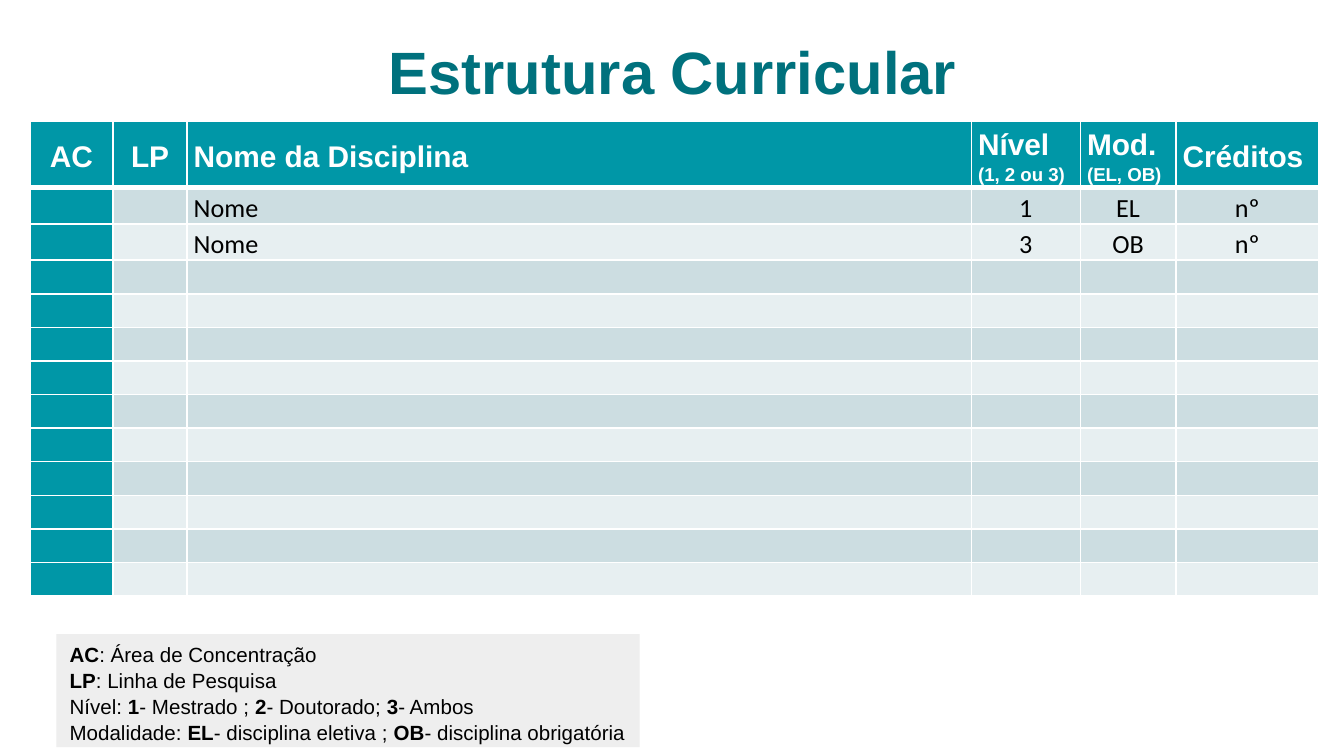
import pptx
import pptx.dml.color
import pptx.enum.shapes
import pptx.enum.text
import pptx.util
from lxml import etree

Pt = pptx.util.Pt
ALIGN = pptx.enum.text.PP_ALIGN
ANCHOR = pptx.enum.text.MSO_ANCHOR
NS = "http://schemas.openxmlformats.org/drawingml/2006/main"

TEAL, WHITE, BLACK = "0097A7", "FFFFFF", "000000"
BANDS = ["CCDDE1", "E7EFF1"]
WIDTHS = [44.6, 39.6, 420.2, 58.4, 51.2, 76.4]
HEADER = [
    [("AC", 16)],
    [("LP", 16)],
    [("Nome da Disciplina", 16)],
    [("Nível ", 16), ("(1, 2 ou 3)", 10)],
    [("Mod. ", 16), ("(EL, OB)", 10)],
    [("Créditos", 16)],
]
COURSES = [
    ["", "", "Nome", "1", "EL", "nº"],
    ["", "", "Nome", "3", "OB", "nº"],
]
EMPTY_ROWS = 10
# Each line alternates plain and bold text, starting with plain
LEGEND = [
    ["", "AC", ": Área de Concentração"],
    ["", "LP", ": Linha de Pesquisa"],
    ["Nível: ", "1", "- Mestrado ; ", "2", "- Doutorado; ", "3", "- Ambos"],
    ["Modalidade: ", "EL", "- disciplina eletiva ; ", "OB", "- disciplina obrigatória"],
]


def rgb(color):
    return pptx.dml.color.RGBColor.from_string(color)


def add_text(para, text, size=11, color=BLACK, bold=False, font="Arial"):
    span = para.add_run()
    span.text = text
    span.font.name = font
    span.font.size = Pt(size)
    span.font.bold = bold
    span.font.color.rgb = rgb(color)


def set_borders(cell, top=1, bottom=1):
    properties = cell._tc.get_or_add_tcPr()
    for side, width in (("L", 1), ("R", 1), ("T", top), ("B", bottom)):
        line = etree.SubElement(properties, f"{{{NS}}}ln{side}", w=str(Pt(width)))
        fill = etree.SubElement(line, f"{{{NS}}}solidFill")
        etree.SubElement(fill, f"{{{NS}}}srgbClr", val=WHITE)


def format_cell(cell, fill, align=ALIGN.LEFT, top=1, bottom=1):
    set_borders(cell, top, bottom)
    cell.fill.solid()
    cell.fill.fore_color.rgb = rgb(fill)
    cell.vertical_anchor = ANCHOR.MIDDLE
    cell.margin_left = cell.margin_right = Pt(3.6)
    cell.margin_top = cell.margin_bottom = 0
    para = cell.text_frame.paragraphs[0]
    para.alignment = align
    para.line_spacing = 1.15
    return para


def add_title(page):
    box = page.shapes.add_textbox(Pt(21), Pt(22.3), Pt(679), Pt(41.8))
    frame = box.text_frame
    frame.word_wrap = True
    frame.vertical_anchor = ANCHOR.BOTTOM
    frame.margin_top = frame.margin_bottom = Pt(7.2)
    para = frame.paragraphs[0]
    para.alignment = ALIGN.CENTER
    add_text(para, "Estrutura Curricular", size=32, color="00717D", bold=True)


def add_curriculum(page):
    rows = COURSES + [[""] * len(WIDTHS)] * EMPTY_ROWS
    table = page.shapes.add_table(
        len(rows) + 1, len(WIDTHS), Pt(16), Pt(64.8), Pt(sum(WIDTHS)), Pt(249)
    ).table
    table.first_row = table.horz_banding = False
    for column, width in zip(table.columns, WIDTHS):
        column.width = Pt(width)
    for row in table.rows:
        row.height = Pt(18)
    table.rows[0].height = Pt(33)

    # Header row
    for index, spans in enumerate(HEADER):
        align = ALIGN.CENTER if index < 2 else ALIGN.LEFT
        para = format_cell(table.cell(0, index), TEAL, align, bottom=3)
        for text, size in spans:
            add_text(para, text, size=size, color=WHITE, bold=True)

    # Course rows: teal first column, banded remainder
    for number, row in enumerate(rows, start=1):
        for index, text in enumerate(row):
            fill = TEAL if index == 0 else BANDS[(number - 1) % 2]
            align = ALIGN.CENTER if index > 2 else ALIGN.LEFT
            para = format_cell(table.cell(number, index), fill, align,
                               top=3 if number == 1 else 1)
            if text:
                add_text(para, text, size=14, font="Calibri")
            else:
                # A small end mark keeps empty rows at their set height
                etree.SubElement(para._p, f"{{{NS}}}endParaRPr", sz="1000")


def add_legend(page):
    box = page.shapes.add_shape(
        pptx.enum.shapes.MSO_SHAPE.RECTANGLE, Pt(30.2), Pt(339.8), Pt(312.5), Pt(60.5)
    )
    box.shadow.inherit = False
    box.fill.solid()
    box.fill.fore_color.rgb = rgb("EEEEEE")
    box.line.fill.background()
    frame = box.text_frame
    frame.word_wrap = False
    frame.vertical_anchor = ANCHOR.TOP
    for index, parts in enumerate(LEGEND):
        para = frame.add_paragraph() if index else frame.paragraphs[0]
        para.alignment = ALIGN.LEFT
        para.line_spacing = 1.05
        for position, text in enumerate(parts):
            if text:
                add_text(para, text, bold=position % 2 == 1)


def main():
    deck = pptx.Presentation()
    deck.slide_width, deck.slide_height = Pt(720), Pt(405)
    page = deck.slides.add_slide(deck.slide_layouts[6])
    add_title(page)
    add_curriculum(page)
    add_legend(page)
    deck.save("out.pptx")


if __name__ == "__main__":
    main()
